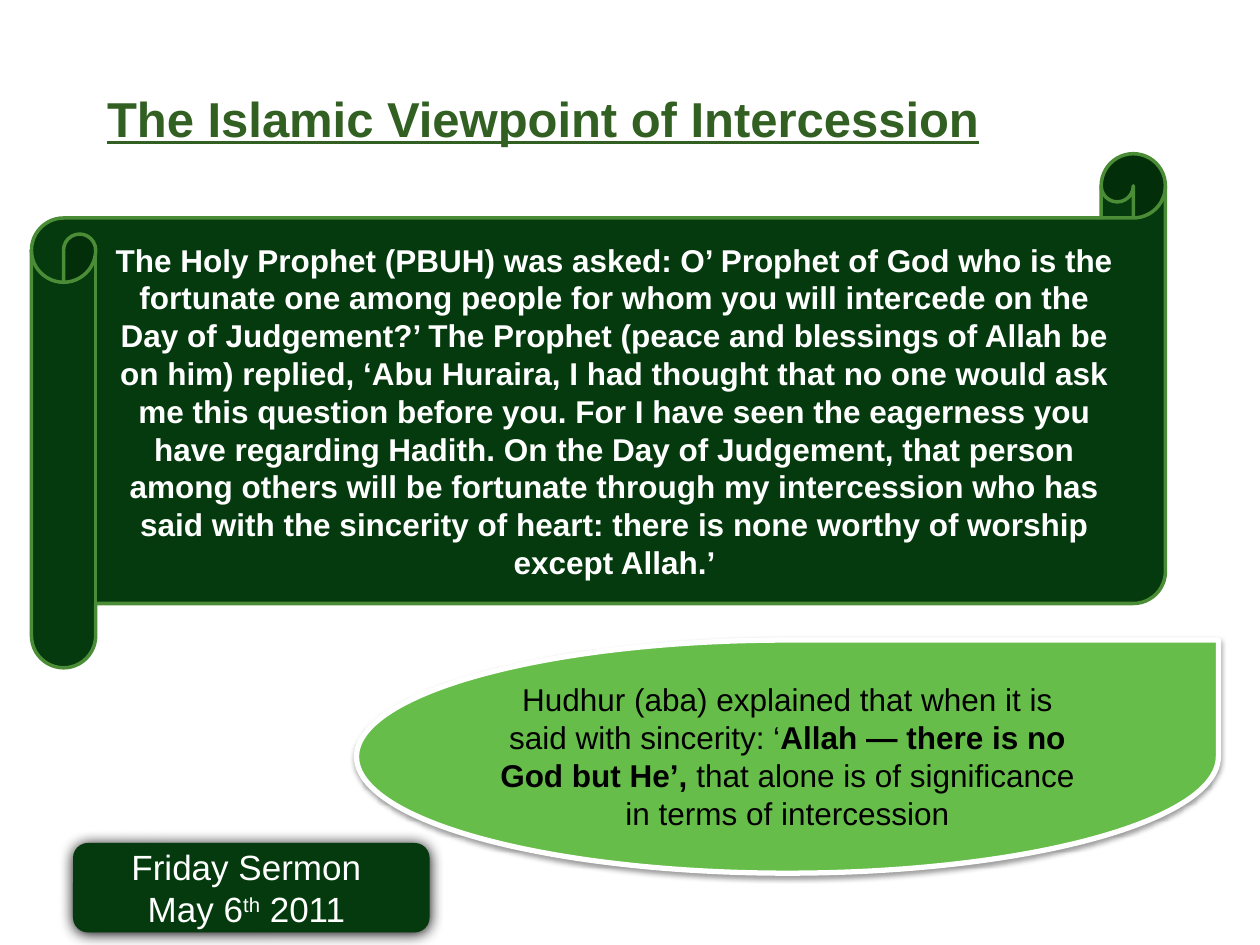
from lxml.etree import SubElement
from pptx import Presentation
from pptx.dml.color import RGBColor
from pptx.enum.shapes import MSO_SHAPE as Preset
from pptx.enum.text import MSO_ANCHOR as Anchor, PP_ALIGN as Align
from pptx.oxml.ns import qn
from pptx.util import Pt

COLORS = {
    "white": "FFFFFF", "black": "000000", "title": "326023",
    "dark": "043A0D", "edge": "4B8C36", "leaf": "66BD49",
}

TITLE = [[("The Islamic Viewpoint of Intercession", {"bold": True, "underline": True})]]
HADITH = [[(
    "The Holy Prophet (PBUH) was asked: O’ Prophet of God who is the fortunate one "
    "among people for whom you will intercede on the Day of Judgement?’ The Prophet "
    "(peace and blessings of Allah be on him) replied, ‘Abu Huraira, I had thought that "
    "no one would ask me this question before you. For I have seen the eagerness you "
    "have regarding Hadith. On the Day of Judgement, that person among others will be "
    "fortunate through my intercession who has said with the sincerity of heart: there "
    "is none worthy of worship except Allah.’", {"bold": True})]]
EXPLANATION = [[
    ("Hudhur (aba) explained that when it is said with sincerity: ‘", {}),
    ("Allah — there is no God but He’, ", {"bold": True}),
    ("that alone is of significance in terms of intercession", {}),
]]
SERMON = [
    [("Friday Sermon ", {})],
    [("May 6", {}), ("th", {"raised": True}), (" 2011 ", {})],
]

PANELS = [
    {"preset": Preset.HORIZONTAL_SCROLL, "place": (18, 87.84, 648, 293.76),
     "fill": "dark", "line": ("edge", 2), "anchor": Anchor.MIDDLE,
     "text": HADITH, "size": 18, "ink": "white"},
    {"preset": Preset.TEAR, "place": (203.76, 365.76, 492.48, 133.2),
     "fill": "leaf", "line": ("white", 3), "anchor": Anchor.TOP,
     "shadow": {"blur": 3.1, "distance": 1.6, "opacity": 38},
     "text": EXPLANATION, "size": 18, "ink": "black"},
    {"preset": Preset.ROUNDED_RECTANGLE, "place": (41.76, 481.68, 203.76, 51.12),
     "fill": "dark", "anchor": Anchor.MIDDLE,
     "shadow": {"blur": 8.5, "distance": 1, "opacity": 100},
     "text": SERMON, "size": 20, "ink": "white"},
]


def color(name):
    return RGBColor.from_string(COLORS[name])


def write(frame, paragraphs, size, ink, align, anchor):
    frame.word_wrap = True
    frame.vertical_anchor = anchor
    for index, spans in enumerate(paragraphs):
        para = frame.add_paragraph() if index else frame.paragraphs[0]
        para.alignment = align
        for text, style in spans:
            span = para.add_run()
            span.text = text
            font = span.font
            font.name, font.size = "Arial", Pt(size)
            font.color.rgb = color(ink)
            font.bold = style.get("bold", False)
            font.underline = style.get("underline", False)
            if style.get("raised"):
                font._element.set("baseline", "30000")


def add_shadow(shape, blur, distance, opacity):
    effects = shape.element.spPr.find(qn("a:effectLst"))
    outer = SubElement(effects, qn("a:outerShdw"), blurRad=str(Pt(blur)),
                       dist=str(Pt(distance)), dir="5400000", rotWithShape="0")
    tint = SubElement(outer, qn("a:srgbClr"), val=COLORS["black"])
    SubElement(tint, qn("a:alpha"), val=str(opacity * 1000))


def add_panel(page, panel):
    shape = page.shapes.add_shape(panel["preset"], *map(Pt, panel["place"]))
    shape.fill.solid()
    shape.fill.fore_color.rgb = color(panel["fill"])
    if "line" in panel:
        name, width = panel["line"]
        shape.line.color.rgb = color(name)
        shape.line.width = Pt(width)
    else:
        shape.line.fill.background()
    shape.shadow.inherit = False
    if "shadow" in panel:
        add_shadow(shape, **panel["shadow"])
    write(shape.text_frame, panel["text"], panel["size"], panel["ink"],
          Align.CENTER, panel["anchor"])


def main():
    """Build the slide on intercession and save it."""
    deck = Presentation()
    deck.slide_width, deck.slide_height = Pt(720), Pt(540)
    page = deck.slides.add_slide(deck.slide_layouts[5])
    title = page.shapes.title
    title.left, title.top, title.width, title.height = map(Pt, (54, 46.8, 612, 41.04))
    write(title.text_frame, TITLE, 28, "title", Align.LEFT, Anchor.TOP)
    for panel in PANELS:
        add_panel(page, panel)
    deck.save("out.pptx")


if __name__ == "__main__":
    main()
